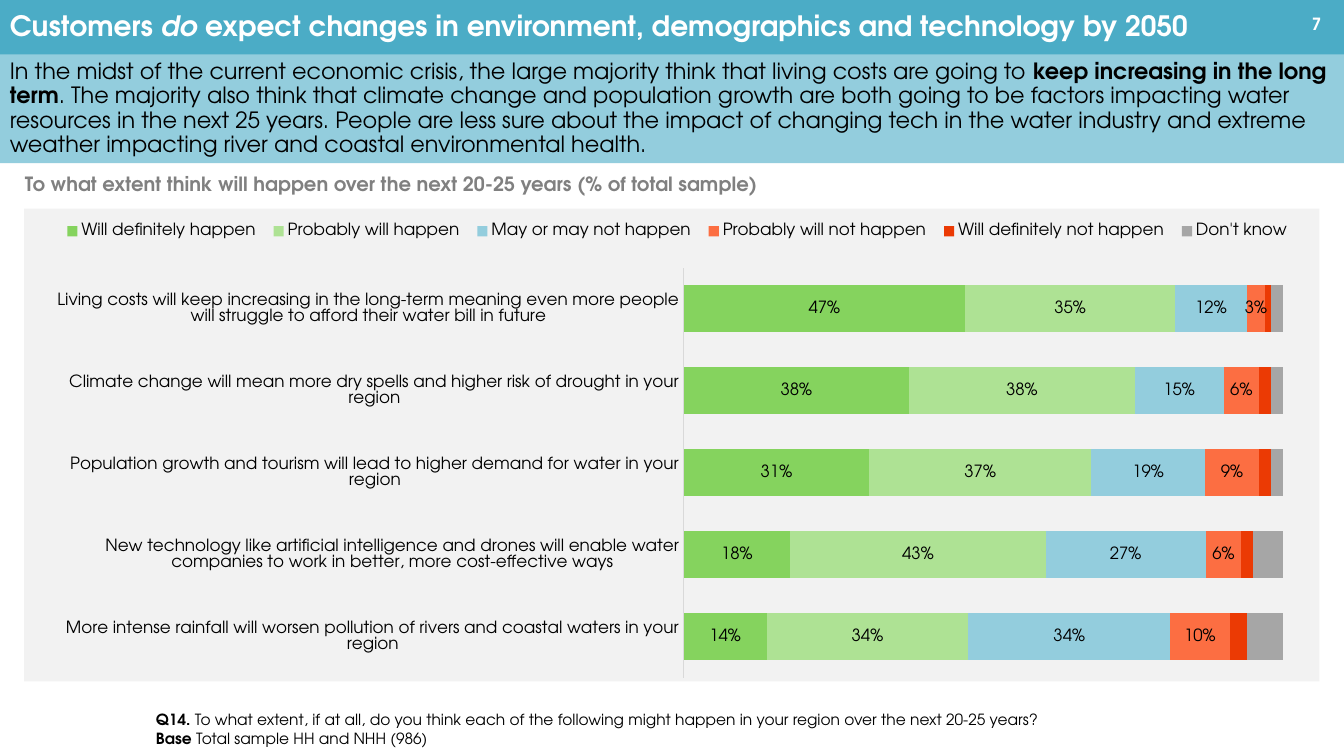
import pptx
import pptx.chart.data
import pptx.dml.color
import pptx.enum.chart
import pptx.enum.shapes
import pptx.enum.text
import pptx.oxml
import pptx.oxml.ns
import pptx.util

Cm = pptx.util.Cm
Pt = pptx.util.Pt
RGB = pptx.dml.color.RGBColor.from_string
Align = pptx.enum.text.PP_ALIGN
Anchor = pptx.enum.text.MSO_ANCHOR
Kind = pptx.enum.chart
FACE = "TeX Gyre Adventor"
HUES = {
    "title": "4BACC6", "intro": "93CDDD", "panel": "F2F2F2",
    "white": "FFFFFF", "black": "000000", "grey": "808080", "axis": "D9D9D9",
    "Will definitely happen": "85D35E",
    "Probably will happen": "AEE294",
    "May or may not happen": "93CDDD",
    "Probably will not happen": "FC6E42",
    "Will definitely not happen": "EB3A04",
    "Don't know": "A6A6A6",
}

deck = pptx.Presentation()
deck.slide_width, deck.slide_height = Cm(33.87), Cm(19.05)
slide = deck.slides.add_slide(deck.slide_layouts[6])


def style(font, size, hue="black", bold=False):
    font.name = FACE
    font.size = Pt(size)
    font.bold = bold
    font.color.rgb = RGB(HUES[hue])


def write(shape, paras, size, hue, anchor=Anchor.TOP, align=Align.LEFT, wrap=True, line=None):
    frame = shape.text_frame
    frame.word_wrap = wrap
    frame.vertical_anchor = anchor
    for i, runs in enumerate(paras):
        para = frame.paragraphs[0] if i == 0 else frame.add_paragraph()
        para.alignment = align
        para.line_spacing = line
        for text, mark in runs:
            run = para.add_run()
            run.text = text
            style(run.font, size, hue, "b" in mark)
            run.font.italic = "i" in mark


title = [("Customers ", "b"), ("do", "bi"),
         (" expect changes in environment, demographics and technology by 2050", "b")]
intro = [
    ("In the midst of the current economic crisis, the large majority think that living costs "
     "are going to ", ""),
    ("keep increasing in the long term", "b"),
    (". The majority also think that climate change and population growth are both going to be "
     "factors impacting water resources in the next 25 years. People are less sure about the "
     "impact of changing tech in the water industry and extreme weather impacting river and "
     "coastal environmental health.", ""),
]
bands = [
    ("panel", (0.61, 5.26, 32.64, 11.91), [], 12),
    ("title", (0, 0, 33.87, 1.4), title, 20),
    ("intro", (0, 1.37, 33.87, 2.74), intro, 16),
]
for name, spot, runs, size in bands:
    band = slide.shapes.add_shape(pptx.enum.shapes.MSO_SHAPE.RECTANGLE, *map(Cm, spot))
    band.shadow.inherit = False
    band.fill.solid()
    band.fill.fore_color.rgb = RGB(HUES[name])
    band.line.fill.background()
    if runs:
        hue = "white" if name == "title" else "black"
        write(band, [runs], size, hue, Anchor.MIDDLE, line=0.9)

data = pptx.chart.data.CategoryChartData(number_format="0%")
data.categories = [
    "Living costs will keep increasing in the long-term meaning even more people will struggle "
    "to afford their water bill in future",
    "Climate change will mean more dry spells and higher risk of drought in your region",
    "Population growth and tourism will lead to higher demand for water in your region",
    "New technology like artificial intelligence and drones will enable water companies to work "
    "in better, more cost-effective ways",
    "More intense rainfall will worsen pollution of rivers and coastal waters in your region",
]
shares = {
    "Will definitely happen": (0.47, 0.38, 0.31, 0.18, 0.14),
    "Probably will happen": (0.35, 0.38, 0.37, 0.43, 0.34),
    "May or may not happen": (0.12, 0.15, 0.19, 0.27, 0.34),
    "Probably will not happen": (0.03, 0.06, 0.09, 0.06, 0.1),
    "Will definitely not happen": (0.01, 0.02, 0.02, 0.02, 0.03),
    "Don't know": (0.02, 0.02, 0.02, 0.05, 0.06),
}
for name, vals in shares.items():
    data.add_series(name, vals)
chart = slide.shapes.add_chart(
    Kind.XL_CHART_TYPE.BAR_STACKED_100, Cm(1.07), Cm(5.26), Cm(32), Cm(12.6), data).chart
style(chart.font, 12)
chart.has_title = False

plot = chart.plots[0]
plot.gap_width = 75
plot.overlap = 100
plot.vary_by_categories = False
for i, bar in enumerate(plot.series):
    bar.format.fill.solid()
    bar.format.fill.fore_color.rgb = RGB(HUES[bar.name])
    if i < 4:
        tags = bar.data_labels
        tags.show_value = True
        tags.number_format = "0%"
        tags.number_format_is_linked = False
        tags.position = Kind.XL_LABEL_POSITION.CENTER
        style(tags.font, 12)

cats = chart.category_axis
cats.reverse_order = True
cats.major_tick_mark = Kind.XL_TICK_MARK.NONE
cats.format.line.color.rgb = RGB(HUES["axis"])
cats.format.line.width = Pt(0.75)
style(cats.tick_labels.font, 12)
scale = chart.value_axis
scale.visible = False
scale.has_major_gridlines = False
scale.minimum_scale, scale.maximum_scale = 0, 1

chart.has_legend = True
legend = chart.legend
legend.position = Kind.XL_LEGEND_POSITION.BOTTOM
legend.include_in_layout = False
style(legend.font, 12)

area = chart.element.find(".//" + pptx.oxml.ns.qn("c:plotArea"))
key = chart.element.find(".//" + pptx.oxml.ns.qn("c:legend"))
frames = [
    (area, '<c:layoutTarget val="inner"/>', (0.505, 0.118, 0.472, 0.82)),
    (key, "", (0.01, 0.01, 0.98, 0.07)),
]
for owner, target, box in frames:
    for old in owner.findall(pptx.oxml.ns.qn("c:layout")):
        owner.remove(old)
    edges = "".join(f'<c:{side}Mode val="edge"/>' for side in "xy")
    sizes = "".join(f'<c:{side} val="{part}"/>' for side, part in zip("xywh", box))
    layout = pptx.oxml.parse_xml(
        f'<c:layout {pptx.oxml.ns.nsdecls("c")}><c:manualLayout>'
        f"{target}{edges}{sizes}</c:manualLayout></c:layout>")
    owner.insert(0 if owner is area else 1, layout)

notes = [
    [("Q14.", "b"),
     (" To what extent, if at all, do you think each of the following might happen in your "
      "region over the next 20-25 years?", "")],
    [("Base", "b"), (" Total sample HH and NHH (986)", "")],
]
head = [[("To what extent think will happen over the next 20-25 years (% of total sample)", "b")]]
texts = [
    ((3.68, 17.78, 25.68, 1.19), notes, 11, "black", Anchor.TOP, Align.LEFT, True),
    ((31.34, 0.03, 2.21, 1.14), [[("7", "b")]], 12, "white", Anchor.MIDDLE, Align.RIGHT, True),
    ((0.38, 4.22, 19.33, 0.86), head, 14, "grey", Anchor.TOP, Align.LEFT, False),
]
for spot, *rest in texts:
    write(slide.shapes.add_textbox(*map(Cm, spot)), *rest)

deck.save("out.pptx")
